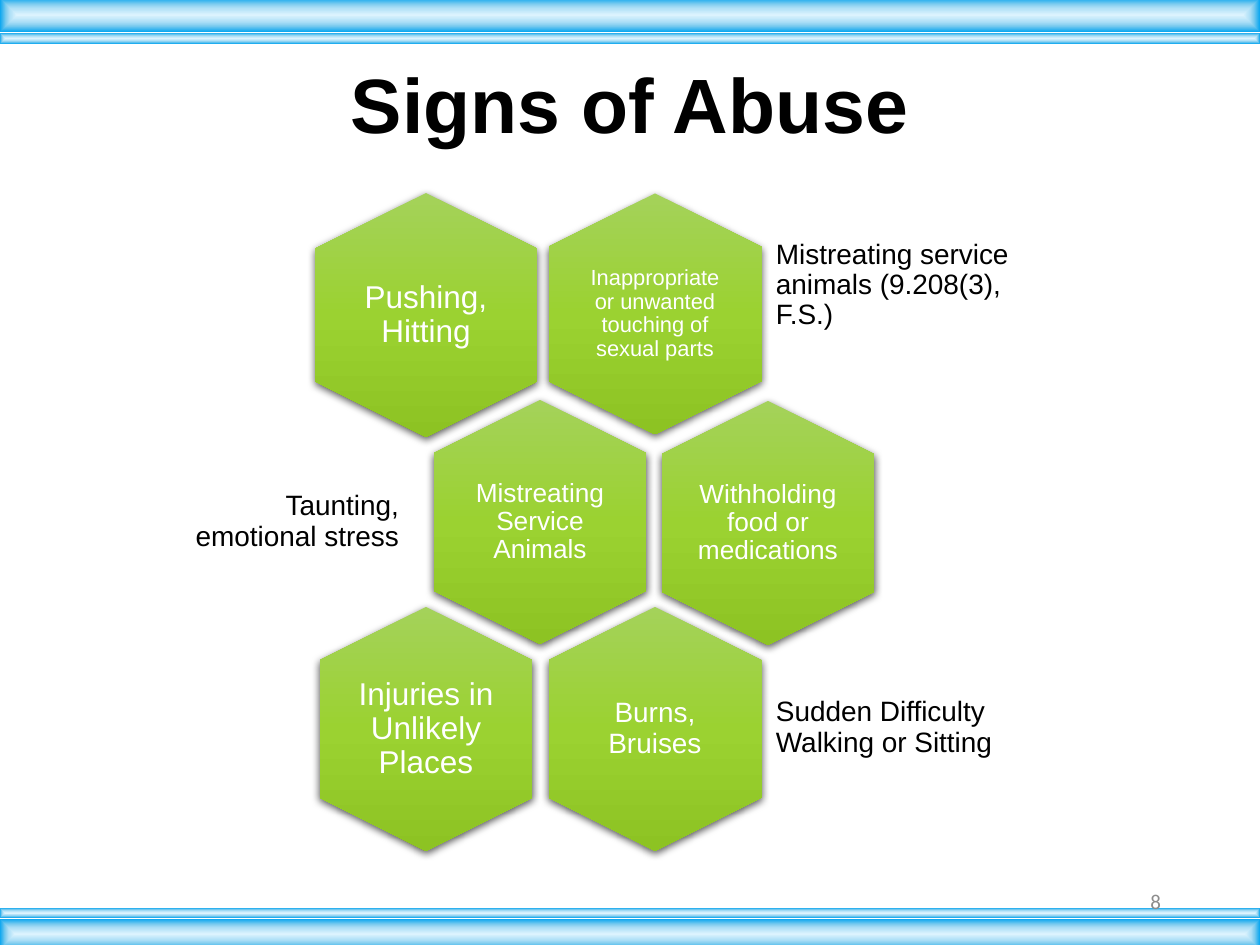
from lxml import etree
from pptx import Presentation
from pptx.dml.color import RGBColor
from pptx.enum.shapes import MSO_SHAPE as Shape
from pptx.enum.text import MSO_ANCHOR as Anchor, MSO_AUTO_SIZE as AutoSize, PP_ALIGN as Align
from pptx.oxml import parse_xml
from pptx.oxml.ns import nsdecls, qn
from pptx.util import Emu, Pt

PX = 914400 // 126
WIDTH, HEIGHT = 1260, 945
LABEL_WIDTH, LABEL_HEIGHT = 146, 167
COLORS = {"black": "000000", "white": "FFFFFF", "gray": "8C8C8C"}
GREEN = [(0, "A4D25A"), (50, "9BD231"), (100, "8DC323")]
BLUE = [(0, "DCF3FE"), (40, "AFE0F7"), (64, "7ECCEF"), (100, "08A5EF")]
DOWNWARD = '<a:lin ang="5400000" scaled="0"/>'
FROM_CENTER = '<a:path path="shape"><a:fillToRect l="50000" t="50000" r="50000" b="50000"/></a:path>'

TITLE = "Signs of Abuse"
HEXAGONS = [
    ("Inappropriate or unwanted touching of sexual parts", (655, 314), (241, 213), 12.5, 6),
    ("Pushing, Hitting", (426, 315), (244, 222), 18, 0),
    ("Mistreating Service Animals", (540, 522), (244, 213), 15, 8),
    ("Withholding food or medications", (768, 523), (244, 213), 15, 0),
    ("Burns, Bruises", (655, 729), (244, 213), 16, 9),
    ("Injuries in Unlikely Places", (426, 729), (244, 213), 18, 0),
]
NOTES = [
    ("Mistreating service animals (9.208(3), F.S.)", (767, 240, 272, 146), Align.LEFT, Anchor.TOP),
    ("Taunting, emotional stress", (168, 481, 240, 82), Align.RIGHT, Anchor.MIDDLE),
    ("Sudden Difficulty Walking or Sitting", (767, 655, 272, 146), Align.LEFT, Anchor.MIDDLE),
]
BARS = [(33, 11), (-2, 34), (908, 10), (919, 30)]


def place(*lengths):
    return [Emu(round(length * PX)) for length in lengths]


def write(box, text, *, size, color="black", font="Arial", bold=False, align=Align.CENTER,
          anchor=Anchor.MIDDLE, insets=(0, 0), spacing=0.9):
    frame = box.text_frame
    frame.word_wrap = True
    frame.auto_size = AutoSize.NONE
    frame.vertical_anchor = anchor
    frame.margin_left = frame.margin_right = Emu(insets[0] * PX)
    frame.margin_top = frame.margin_bottom = Emu(insets[1] * PX)
    para = frame.paragraphs[0]
    para.alignment = align
    para.line_spacing = spacing
    span = para.add_run()
    span.text = text
    span.font.name = font
    span.font.size = Pt(size)
    span.font.bold = bold
    span.font.color.rgb = RGBColor.from_string(COLORS[color])


def add_gradient_shape(page, kind, bounds, stops, direction):
    shape = page.shapes.add_shape(kind, *place(*bounds))
    shape.fill.background()
    shape.line.fill.background()
    shape.shadow.inherit = False
    marks = "".join(
        f'<a:gs pos="{position * 1000}"><a:srgbClr val="{color}"/></a:gs>' for position, color in stops)
    properties = shape._element.spPr
    properties.replace(properties.find(qn("a:noFill")), parse_xml(
        f'<a:gradFill {nsdecls("a")} rotWithShape="0"><a:gsLst>{marks}</a:gsLst>{direction}</a:gradFill>'))
    return shape


def add_shadow(shape):
    effects = shape._element.spPr.find(qn("a:effectLst"))
    shadow = etree.SubElement(effects, qn("a:outerShdw"), blurRad=str(Pt(4.5)), dist=str(Pt(1.5)),
                              dir="5400000", rotWithShape="0")
    color = etree.SubElement(shadow, qn("a:srgbClr"), val=COLORS["black"])
    etree.SubElement(color, qn("a:alpha"), val="63000")


def add_hexagon(page, text, center, dimensions, size, inset):
    (x, y), (width, height) = center, dimensions
    hexagon = add_gradient_shape(page, Shape.HEXAGON, (x - width / 2, y - height / 2, width, height),
                                 GREEN, DOWNWARD)
    hexagon.adjustments[0] = 0.25
    hexagon.rotation = 90
    add_shadow(hexagon)
    label = page.shapes.add_textbox(
        *place(x - LABEL_WIDTH / 2, y - LABEL_HEIGHT / 2, LABEL_WIDTH, LABEL_HEIGHT))
    write(label, text, size=size, color="white", insets=(inset, inset))


def main():
    deck = Presentation()
    deck.slide_width, deck.slide_height = place(WIDTH, HEIGHT)
    page = deck.slides.add_slide(deck.slide_layouts[5])

    for hexagon in HEXAGONS:
        add_hexagon(page, *hexagon)
    for text, bounds, align, anchor in NOTES:
        write(page.shapes.add_textbox(*place(*bounds)), text, size=16, align=align, anchor=anchor,
              insets=(9, 0))
    for top, height in BARS:
        add_gradient_shape(page, Shape.RECTANGLE, (0, top, WIDTH, height), BLUE, FROM_CENTER)

    title = page.shapes.title
    title.left, title.top, title.width, title.height = place(87, 67, 1086, 159)
    write(title, TITLE, size=44, bold=True, anchor=Anchor.TOP, insets=(12, 0))
    number = page.shapes.add_textbox(*place(890, 876, 283, 50))
    write(number, "8", size=12, color="gray", font="Calibri", align=Align.RIGHT, insets=(12, 6), spacing=1.0)
    deck.save("out.pptx")


if __name__ == "__main__":
    main()
